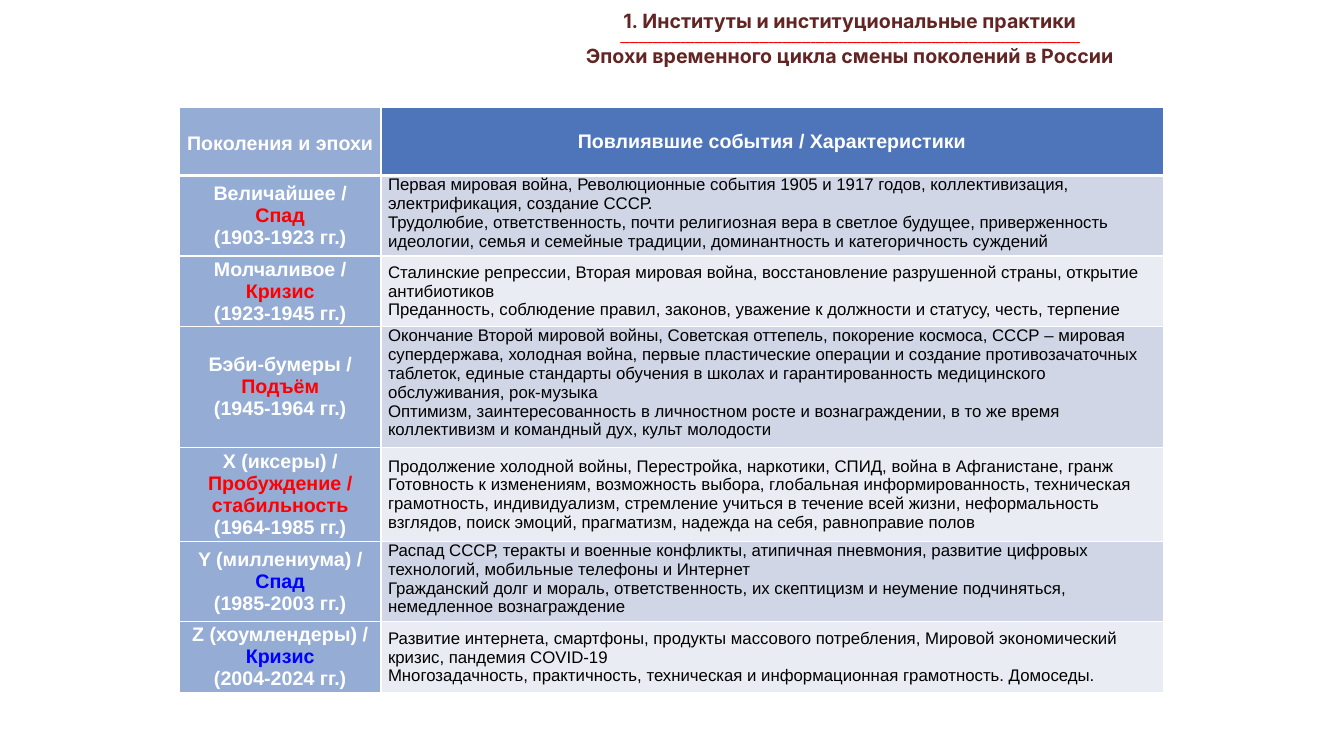
from pptx import Presentation
from pptx import util as u
from pptx.dml import color
from pptx.enum import text
from pptx.oxml import parse_xml
from pptx.oxml import ns

WIDTH, HEIGHT = u.Inches(13.33), u.Inches(7.5)
WHITE, BLACK, RED, BLUE, MAROON = "FFFFFF", "000000", "FF0000", "0000FF", "632523"
HEAD_FILL, SIDE_FILL = "4E75B9", "95ACD5"
BAND_FILLS = ["D0D6E6", "E9ECF3"]
BAND_ANCHORS = [text.MSO_ANCHOR.TOP, text.MSO_ANCHOR.MIDDLE]

COLUMNS = [15, 58.2]
ROWS = [8.93, 10.67, 9.33, 16, 12.4, 10.67, 9.33]

HEADINGS = ["Поколения и эпохи", "Повлиявшие события / Характеристики"]
GENERATIONS = [
    ("Величайшее /", "Спад", RED, "(1903-1923 гг.)",
     "Первая мировая война, Революционные события 1905 и 1917 годов, коллективизация, "
     "электрификация, создание СССР.",
     "Трудолюбие, ответственность, почти религиозная вера в светлое будущее, приверженность "
     "идеологии, семья и семейные традиции, доминантность и категоричность суждений"),
    ("Молчаливое /", "Кризис", RED, "(1923-1945 гг.)",
     "Сталинские репрессии, Вторая мировая война, восстановление разрушенной страны, "
     "открытие антибиотиков",
     "Преданность, соблюдение правил, законов, уважение к должности и статусу, честь, терпение"),
    ("Бэби-бумеры /", "Подъём", RED, "(1945-1964 гг.)",
     "Окончание Второй мировой войны, Советская оттепель, покорение космоса, СССР – мировая "
     "супердержава, холодная война, первые пластические операции и создание "
     "противозачаточных таблеток, единые стандарты обучения в школах и гарантированность "
     "медицинского обслуживания, рок-музыка",
     "Оптимизм, заинтересованность в личностном росте и вознаграждении, в то же время "
     "коллективизм и командный дух, культ молодости"),
    ("X (иксеры) /", "Пробуждение / стабильность", RED, "(1964-1985 гг.)",
     "Продолжение холодной войны, Перестройка, наркотики, СПИД, война в Афганистане, гранж",
     "Готовность к изменениям, возможность выбора, глобальная информированность, техническая "
     "грамотность, индивидуализм, стремление учиться в течение всей жизни, неформальность "
     "взглядов, поиск эмоций, прагматизм, надежда на себя, равноправие полов"),
    ("Y (миллениума) /", "Спад", BLUE, "(1985-2003 гг.)",
     "Распад СССР, теракты и военные конфликты, атипичная пневмония, развитие цифровых "
     "технологий, мобильные телефоны и Интернет",
     "Гражданский долг и мораль, ответственность, их скептицизм и неумение подчиняться, "
     "немедленное вознаграждение"),
    ("Z (хоумлендеры) /", "Кризис", BLUE, "(2004-2024 гг.)",
     "Развитие интернета, смартфоны, продукты массового потребления, Мировой экономический "
     "кризис, пандемия COVID-19",
     "Многозадачность, практичность, техническая и информационная грамотность. Домоседы."),
]


def across(percent):
    return round(WIDTH * percent / 100)


def down(percent):
    return round(HEIGHT * percent / 100)


def paint(target, hex_color):
    target.rgb = color.RGBColor.from_string(hex_color)


def assign(target, values):
    for name, value in values.items():
        setattr(target, name, value)


def write(frame, lines, align, font_name, bold):
    for index, (words, size, hex_color) in enumerate(lines):
        para = frame.paragraphs[0] if index == 0 else frame.add_paragraph()
        para.alignment = align
        span = para.add_run()
        span.text = words
        assign(span.font, {"name": font_name, "size": u.Pt(size), "bold": bold})
        paint(span.font.color, hex_color)


def add_title(page):
    box = page.shapes.title
    assign(box, {"left": across(39.16), "top": down(1.07),
                 "width": across(48.16), "height": down(8)})
    assign(box.text_frame, {"word_wrap": True, "auto_size": text.MSO_AUTO_SIZE.NONE,
                            "vertical_anchor": text.MSO_ANCHOR.MIDDLE})
    write(box.text_frame, [
        ("1. Институты и институциональные практики", 14, MAROON),
        ("_" * 99, 7, RED),
        ("Эпохи временного цикла смены поколений в России", 14, MAROON),
    ], text.PP_ALIGN.CENTER, "Inter", True)


def add_borders(cell, top, bottom):
    properties = cell._tc.get_or_add_tcPr()
    for side, points in {"L": 1, "R": 1, "T": top, "B": bottom}.items():
        properties.append(parse_xml(
            f'<a:ln{side} {ns.nsdecls("a")} w="{u.Pt(points)}"><a:solidFill>'
            f'<a:srgbClr val="{WHITE}"/></a:solidFill></a:ln{side}>'))


def fill_cell(cell, lines, fill, align, anchor=text.MSO_ANCHOR.MIDDLE, bold=True):
    assign(cell, {"margin_left": u.Inches(0.07), "margin_right": u.Inches(0.07),
                  "margin_top": 0, "margin_bottom": 0, "vertical_anchor": anchor})
    cell.fill.solid()
    paint(cell.fill.fore_color, fill)
    write(cell.text_frame, lines, align, "Arial", bold)


def add_generations(page):
    table = page.shapes.add_table(len(ROWS), len(COLUMNS), across(13.35), down(14.27),
                                  across(sum(COLUMNS)), down(sum(ROWS))).table
    for column, share in zip(table.columns, COLUMNS):
        column.width = across(share)
    for row, share in zip(table.rows, ROWS):
        row.height = down(share)
    for index, row in enumerate(table.rows):
        for cell in row.cells:
            add_borders(cell, 3 if index == 1 else 1, 3 if index == 0 else 1)

    center, left = text.PP_ALIGN.CENTER, text.PP_ALIGN.LEFT
    for column, (heading, fill) in enumerate(zip(HEADINGS, [SIDE_FILL, HEAD_FILL])):
        fill_cell(table.cell(0, column), [(heading, 14, WHITE)], fill, center)
    table.cell(0, 0).margin_top = u.Inches(0.04)
    for index, (name, epoch, accent, years, events, traits) in enumerate(GENERATIONS):
        band = index % 2
        fill_cell(table.cell(index + 1, 0),
                  [(name, 14, WHITE), (epoch, 14, accent), (years, 14, WHITE)],
                  SIDE_FILL, center)
        fill_cell(table.cell(index + 1, 1), [(events, 12, BLACK), (traits, 12, BLACK)],
                  BAND_FILLS[band], left, BAND_ANCHORS[band], False)


def main():
    deck = Presentation()
    assign(deck, {"slide_width": WIDTH, "slide_height": HEIGHT})
    page = deck.slides.add_slide(deck.slide_layouts[5])
    add_title(page)
    add_generations(page)
    deck.save("out.pptx")


if __name__ == "__main__":
    main()
